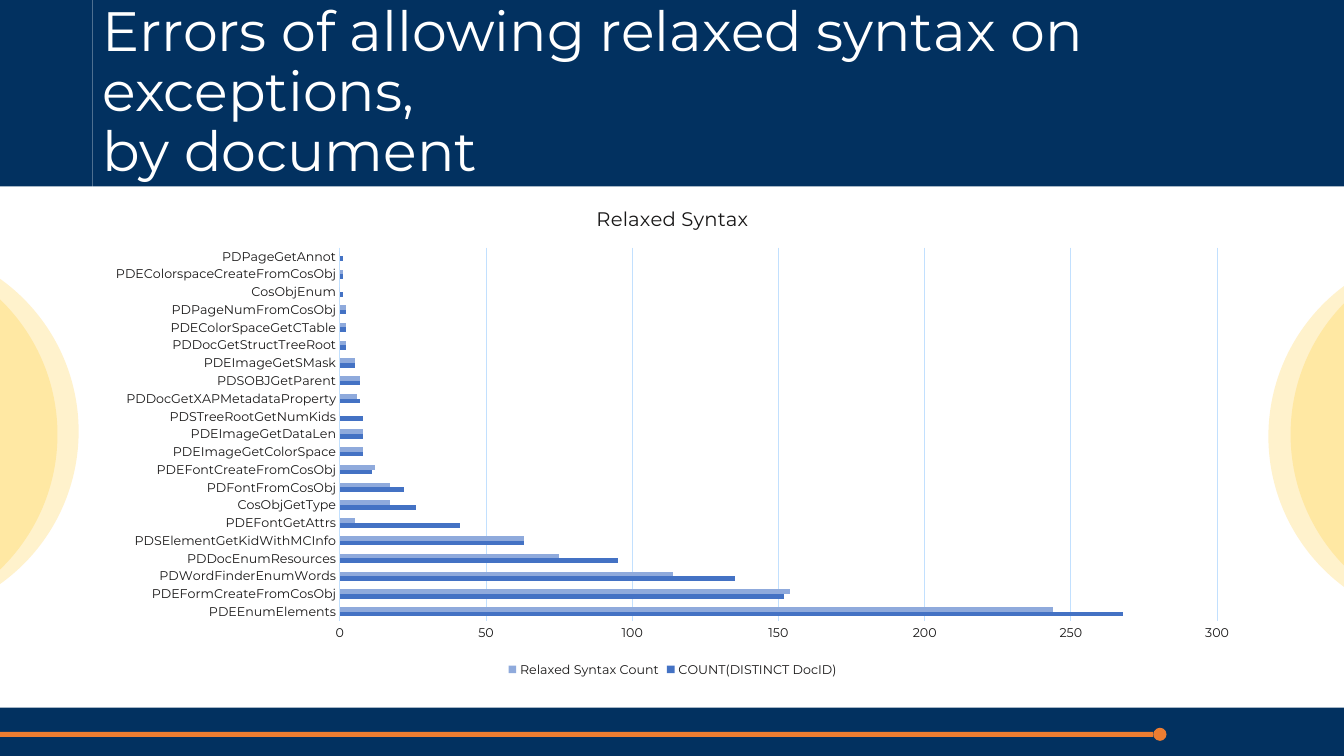
from lxml import etree
from pptx import Presentation
from pptx.chart.data import CategoryChartData
from pptx.dml.color import RGBColor
from pptx.enum.chart import XL_CHART_TYPE, XL_LEGEND_POSITION, XL_TICK_MARK
from pptx.enum.shapes import MSO_SHAPE
from pptx.enum.text import MSO_ANCHOR, PP_ALIGN
from pptx.oxml.ns import qn
from pptx.util import Inches, Pt

RECTANGLE, OVAL = MSO_SHAPE.RECTANGLE, MSO_SHAPE.OVAL
BAR_CLUSTERED = XL_CHART_TYPE.BAR_CLUSTERED
LEGEND_BOTTOM = XL_LEGEND_POSITION.BOTTOM
NO_TICKS = XL_TICK_MARK.NONE
MIDDLE, LEFT = MSO_ANCHOR.MIDDLE, PP_ALIGN.LEFT

FONT = "Montserrat"
NAVY, ORANGE, GOLD, WHITE = "023160", "ED7D31", "FFC000", "FFFFFF"
INK, GRID = "181717", "C2E0FE"

WIDTH, HEIGHT = 13.33, 7.5
MARGIN, HEADER_HEIGHT, FOOTER_HEIGHT = 0.92, 1.85, 0.48
CIRCLE_SIZE = 3.72
CIRCLES = [(12.8, 2.45), (12.58, 2.47), (-2.94, 2.42), (-3.15, 2.45)]
LINE_END, LINE_HEIGHT, DOT_SIZE = 11.44, 0.05, 0.13

TITLE = "Errors of allowing relaxed syntax on exceptions,\vby document"
CHART_TITLE = "Relaxed Syntax"
SERIES = [("COUNT(DISTINCT DocID)", "4472C4"), ("Relaxed Syntax Count", "8FAADC")]
ERRORS = [
    ("PDEEnumElements", 268, 244),
    ("PDEFormCreateFromCosObj", 152, 154),
    ("PDWordFinderEnumWords", 135, 114),
    ("PDDocEnumResources", 95, 75),
    ("PDSElementGetKidWithMCInfo", 63, 63),
    ("PDEFontGetAttrs", 41, 5),
    ("CosObjGetType", 26, 17),
    ("PDFontFromCosObj", 22, 17),
    ("PDEFontCreateFromCosObj", 11, 12),
    ("PDEImageGetColorSpace", 8, 8),
    ("PDEImageGetDataLen", 8, 8),
    ("PDSTreeRootGetNumKids", 8, 0),
    ("PDDocGetXAPMetadataProperty", 7, 6),
    ("PDSOBJGetParent", 7, 7),
    ("PDEImageGetSMask", 5, 5),
    ("PDDocGetStructTreeRoot", 2, 2),
    ("PDEColorSpaceGetCTable", 2, 2),
    ("PDPageNumFromCosObj", 2, 2),
    ("CosObjEnum", 1, 0),
    ("PDEColorspaceCreateFromCosObj", 1, 1),
    ("PDPageGetAnnot", 1, 0),
]


def paint(fill, color):
    fill.solid()
    fill.fore_color.rgb = RGBColor.from_string(color)


def set_font(font, size, color):
    font.name, font.size, font.bold = FONT, Pt(size), False
    paint(font.fill, color)


def draw_line(line, color):
    line.width = Pt(0.75)
    paint(line.fill, color)


def add_block(slide, kind, left, top, width, height, color, opacity=100):
    shape = slide.shapes.add_shape(
        kind, Inches(left), Inches(top), Inches(width), Inches(height))
    shape.shadow.inherit = False
    paint(shape.fill, color)
    shape.line.fill.background()
    if opacity < 100:
        fill_color = shape.fill._xPr.find(qn("a:solidFill"))[0]
        etree.SubElement(fill_color, qn("a:alpha")).set("val", str(opacity * 1000))
    return shape


def add_background(slide):
    add_block(slide, RECTANGLE, 0, 0, MARGIN, HEADER_HEIGHT, NAVY)
    for left, top in CIRCLES:
        add_block(slide, OVAL, left, top, CIRCLE_SIZE, CIRCLE_SIZE, GOLD, 20)
    footer_top = HEIGHT - FOOTER_HEIGHT
    add_block(slide, RECTANGLE, 0, footer_top, WIDTH, FOOTER_HEIGHT, NAVY)
    middle = 7.285
    add_block(slide, RECTANGLE, 0, middle - LINE_HEIGHT / 2, LINE_END, LINE_HEIGHT, ORANGE)
    add_block(slide, OVAL, LINE_END, middle - DOT_SIZE / 2, DOT_SIZE, DOT_SIZE, ORANGE)


def add_title(slide):
    header = add_block(slide, RECTANGLE, MARGIN, 0, WIDTH - MARGIN, HEADER_HEIGHT, NAVY)
    frame = header.text_frame
    frame.word_wrap = True
    frame.vertical_anchor = MIDDLE
    frame.text = TITLE
    paragraph = frame.paragraphs[0]
    paragraph.alignment = LEFT
    paragraph.line_spacing = 0.9
    set_font(paragraph.font, 39.6, WHITE)


def add_error_chart(slide):
    names, *columns = zip(*ERRORS)
    data = CategoryChartData()
    data.categories = names
    for (name, _), values in zip(SERIES, columns):
        data.add_series(name, values)
    chart = slide.shapes.add_chart(
        BAR_CLUSTERED, Inches(MARGIN), Inches(HEADER_HEIGHT),
        Inches(11.5), Inches(4.91), data).chart
    set_font(chart.font, 10, INK)

    chart.has_title = True
    chart.chart_title.include_in_layout = False
    chart.chart_title.text_frame.text = CHART_TITLE
    set_font(chart.chart_title.text_frame.paragraphs[0].font, 14, INK)

    chart.has_legend = True
    chart.legend.position = LEGEND_BOTTOM
    chart.legend.include_in_layout = False
    set_font(chart.legend.font, 9, INK)

    plot = chart.plots[0]
    plot.gap_width, plot.overlap = 182, 0
    plot.vary_by_categories = False
    for series, (_, color) in zip(plot.series, SERIES):
        paint(series.format.fill, color)

    for axis in (chart.category_axis, chart.value_axis):
        axis.major_tick_mark = axis.minor_tick_mark = NO_TICKS
        set_font(axis.tick_labels.font, 9, INK)
    draw_line(chart.category_axis.format.line, GRID)
    values_axis = chart.value_axis
    values_axis.minimum_scale, values_axis.maximum_scale = 0, 300
    values_axis.major_unit = 50
    values_axis.format.line.fill.background()
    values_axis.has_major_gridlines = True
    draw_line(values_axis.major_gridlines.format.line, GRID)


def main():
    """Build the slide on relaxed syntax errors by document."""
    presentation = Presentation()
    presentation.slide_width, presentation.slide_height = Inches(WIDTH), Inches(HEIGHT)
    slide = presentation.slides.add_slide(presentation.slide_layouts[6])
    add_background(slide)
    add_title(slide)
    add_error_chart(slide)
    presentation.save("out.pptx")


if __name__ == "__main__":
    main()
